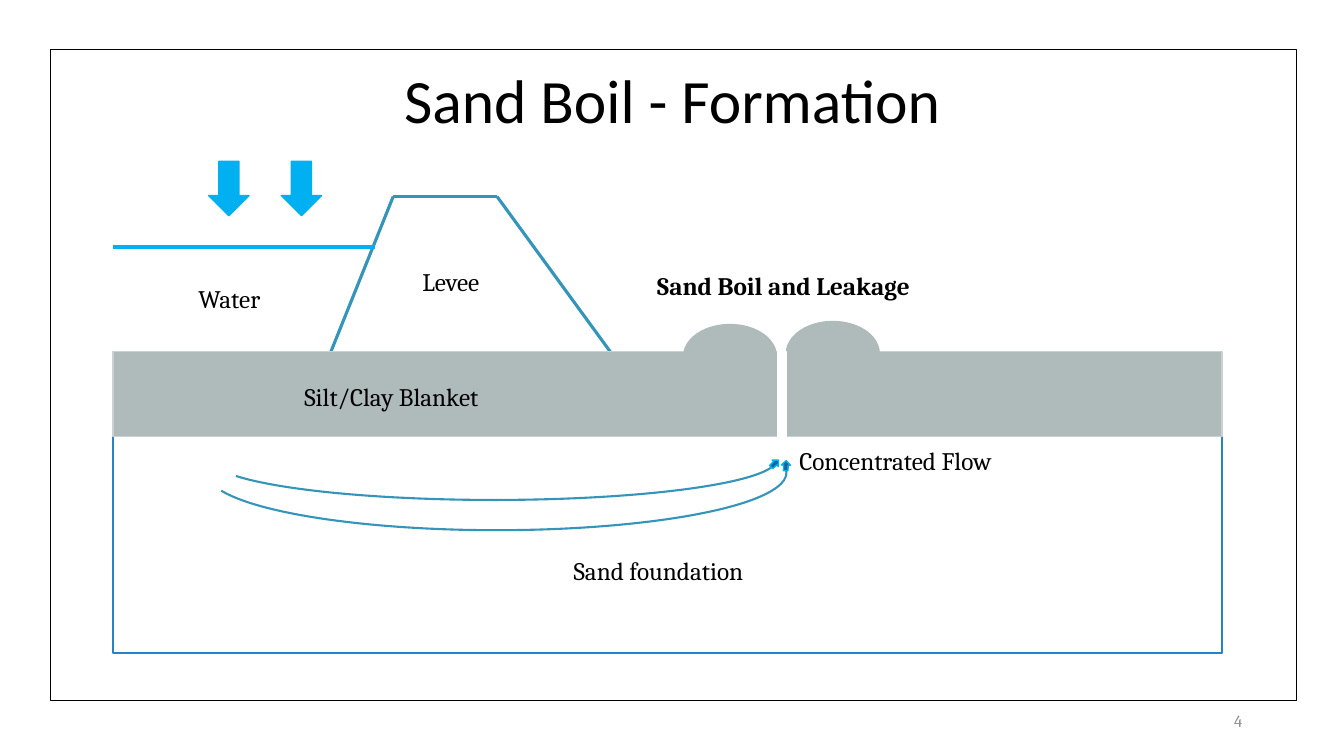
from pptx import Presentation
from pptx.dml.color import RGBColor
from pptx.enum.shapes import MSO_CONNECTOR, MSO_SHAPE
from pptx.enum.text import MSO_ANCHOR, PP_ALIGN
from pptx.oxml.ns import qn
from pptx.util import Inches, Pt
from lxml import etree

RECTANGLE = MSO_SHAPE.RECTANGLE
ELLIPSE = MSO_SHAPE.OVAL
DOWN_ARROW = MSO_SHAPE.DOWN_ARROW
UP_ARROW = MSO_SHAPE.UP_ARROW
ARC = MSO_SHAPE.ARC
STRAIGHT = MSO_CONNECTOR.STRAIGHT
MIDDLE = MSO_ANCHOR.MIDDLE
CENTER = PP_ALIGN.CENTER
RIGHT = PP_ALIGN.RIGHT

BLACK = RGBColor(0x00, 0x00, 0x00)
WHITE = RGBColor(0xFF, 0xFF, 0xFF)
GRAY = RGBColor(0x8C, 0x8C, 0x8C)
CLAY = RGBColor(0xAF, 0xBA, 0xBB)
CLAY_EDGE = RGBColor(0xCA, 0xD1, 0xD2)
SAND_EDGE = RGBColor(0x26, 0x83, 0xC6)
TEAL = RGBColor(0x34, 0x94, 0xBA)
WATER = RGBColor(0x00, 0xB0, 0xF0)
DARK_BLUE = RGBColor(0x1D, 0x62, 0x94)

deck = Presentation()
deck.slide_width = Inches(13.33)
deck.slide_height = Inches(7.5)
page = deck.slides.add_slide(deck.slide_layouts[5])


def add_figure(kind, left, top, width, height, fill, edge, weight=1):
    figure = page.shapes.add_shape(
        kind, Inches(left), Inches(top), Inches(width), Inches(height))
    figure.shadow.inherit = False
    if fill is None:
        figure.fill.background()
    else:
        figure.fill.solid()
        figure.fill.fore_color.rgb = fill
    figure.line.color.rgb = edge
    figure.line.width = Pt(weight)
    return figure


def add_line(start, end, color, weight):
    line = page.shapes.add_connector(
        STRAIGHT, Inches(start[0]), Inches(start[1]), Inches(end[0]), Inches(end[1]))
    line.line.color.rgb = color
    line.line.width = Pt(weight)
    etree.SubElement(line._element.spPr, qn("a:effectLst"))


title = page.shapes.title
title.left, title.top = Inches(0.92), Inches(0.3)
title.width, title.height = Inches(11.5), Inches(1.45)
title.text_frame.text = "Sand Boil - Formation"
title.text_frame.vertical_anchor = MIDDLE
heading = title.text_frame.paragraphs[0]
heading.alignment = CENTER
heading.line_spacing = 0.9
heading.font.name = "Calibri"
heading.font.size = Pt(44)
heading.font.color.rgb = BLACK

add_figure(RECTANGLE, 1.12, 3.54, 11, 2.94, None, SAND_EDGE, 1.5)

crest_left, crest_right = (3.9, 1.95), (4.93, 1.95)
for start, end in [(crest_left, (3.27, 3.52)), (crest_right, (6.09, 3.54)),
                   (crest_left, crest_right)]:
    add_line(start, end, TEAL, 2.25)

add_figure(RECTANGLE, 1.12, 3.49, 11, 0.84, CLAY, CLAY_EDGE)
for left, top in [(6.78, 3.22), (7.8, 3.19)]:
    add_figure(ELLIPSE, left, top, 0.92, 0.63, CLAY, CLAY)

add_line((1.12, 2.45), (3.72, 2.45), WATER, 3)
for left in (2.07, 2.79):
    add_figure(DOWN_ARROW, left, 1.6, 0.4, 0.54, WATER, WATER)

for left, top, width, height, start_angle in [
        (2.05, 4.12, 5.75, 1.14, 215.037), (2.09, 4.15, 5.62, 0.81, 0.424)]:
    flow = add_figure(ARC, left, top, width, height, None, TEAL, 1.5)
    flow.adjustments[0] = start_angle
    flow.adjustments[1] = 105.764

for left, top, angle in [(7.64, 4.55, 46.9), (7.75, 4.57, 3.1)]:
    flow_tip = add_figure(UP_ARROW, left, top, 0.09, 0.1, DARK_BLUE, WATER)
    flow_tip.rotation = angle

add_figure(RECTANGLE, 7.71, 3.49, 0.09, 0.92, WHITE, WHITE)

labels = [
    ("Levee", 4.09, 2.59, 0.99, 18, BLACK, False),
    ("Silt/Clay Blanket", 2.92, 3.73, 2.34, 18, BLACK, False),
    ("Water", 1.87, 2.76, 1.08, 18, BLACK, False),
    ("Concentrated Flow", 7.83, 4.37, 2.54, 18, BLACK, False),
    ("Sand foundation", 5.59, 5.46, 2.38, 18, BLACK, False),
    ("Sand Boil and Leakage", 6.42, 2.63, 3.11, 18, BLACK, True),
    ("4", 9.42, 6.95, 3, 12, GRAY, False),
]
for text, left, top, width, size, color, bold in labels:
    box = page.shapes.add_textbox(
        Inches(left), Inches(top), Inches(width), Inches(0.4))
    box.text_frame.word_wrap = True
    box.text_frame.text = text
    para = box.text_frame.paragraphs[0]
    para.font.name = "Cambria"
    para.font.size = Pt(size)
    para.font.bold = bold
    para.font.color.rgb = color

page_number = box
page_number.text_frame.vertical_anchor = MIDDLE
page_number.text_frame.paragraphs[0].alignment = RIGHT

add_figure(RECTANGLE, 0.5, 0.49, 12.36, 6.46, None, BLACK, 0.75)

deck.save("out.pptx")
